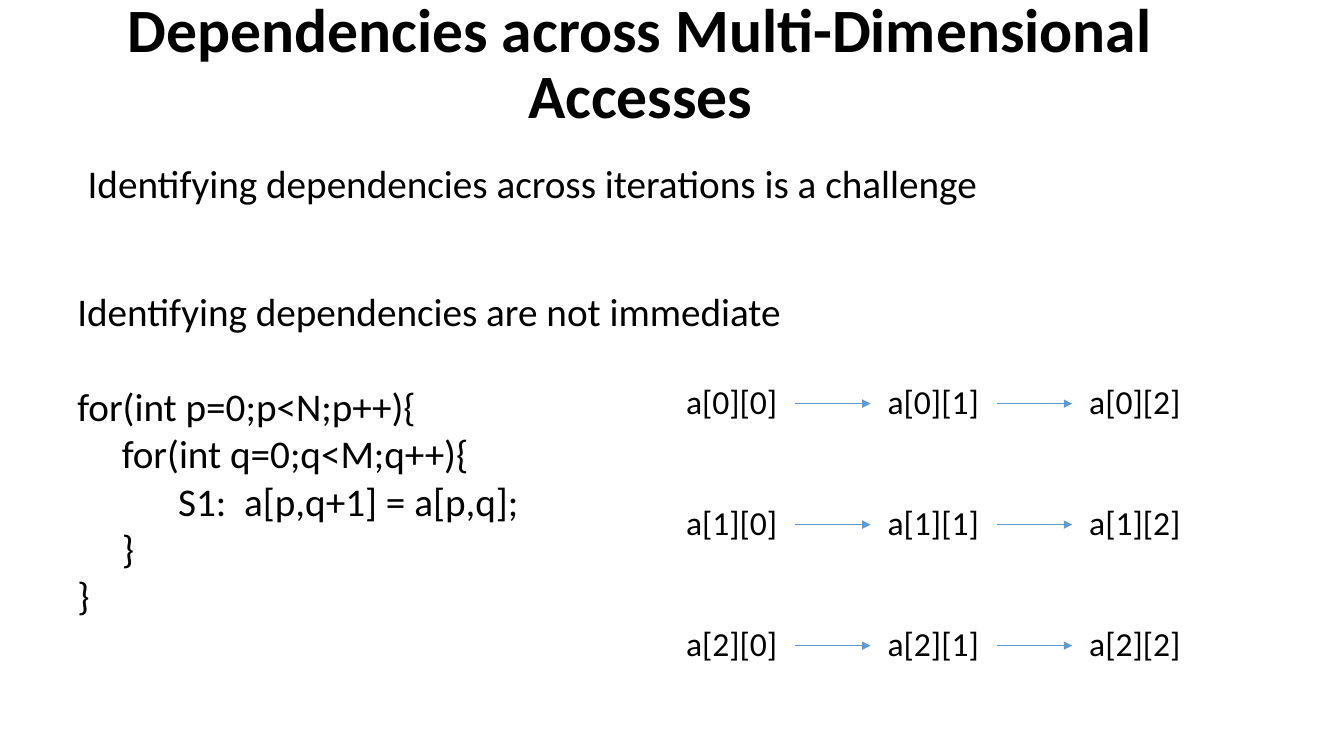
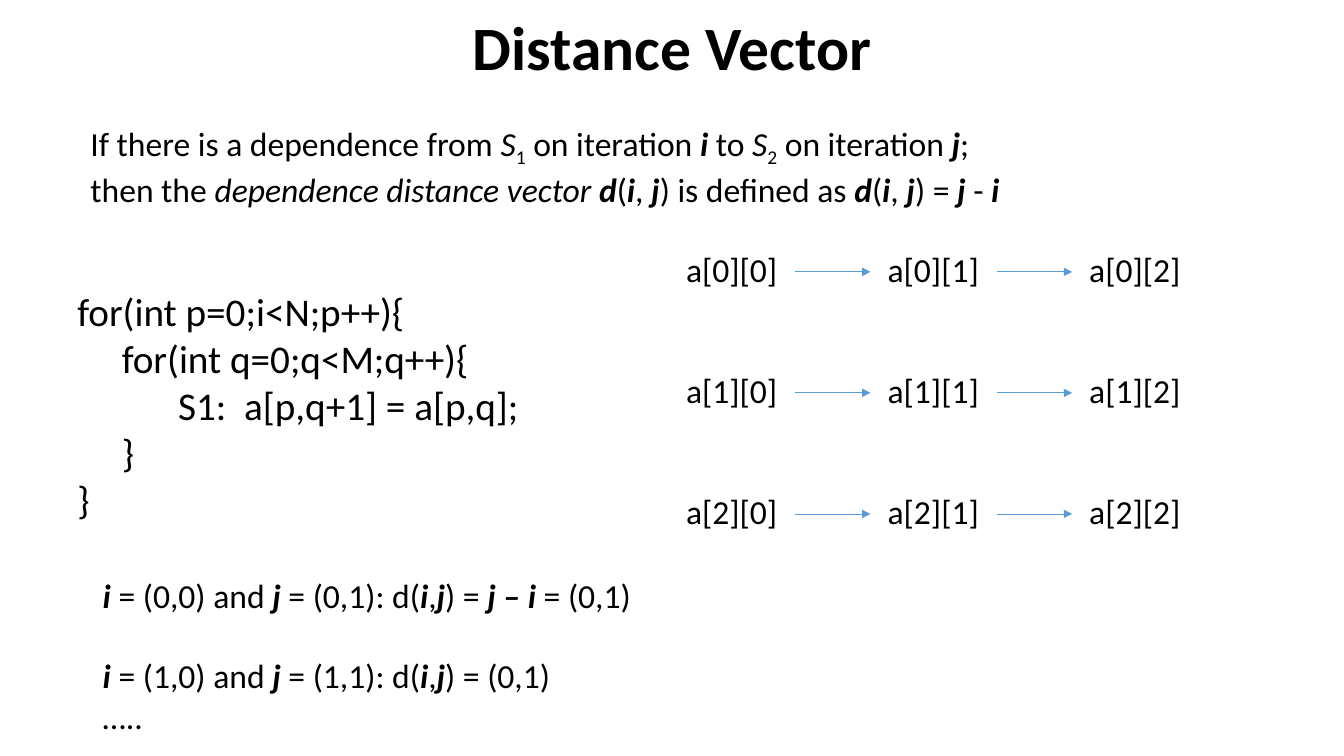
from dataclasses import dataclass

from pptx import Presentation
from pptx import util as u
from pptx.dml.color import RGBColor
from pptx.enum import shapes, text
from pptx.oxml import ns, xmlchemy


@dataclass(frozen=True)
class Theme:
    """Colours and type sizes shared by the slides."""
    font: str = "Calibri"
    ink: RGBColor = RGBColor(0, 0, 0)
    arrow: RGBColor = RGBColor(0x5B, 0x9B, 0xD5)
    title: int = 44
    large: int = 28
    normal: int = 24
    rule: float = 0.5


@dataclass(frozen=True)
class Span:
    """A stretch of text with its own character style."""
    words: str
    bold: bool = False
    italic: bool = False
    sub: bool = False


@dataclass(frozen=True)
class Line:
    """A paragraph of spans with indent in cm and space before in points."""
    spans: tuple
    indent: float = 0
    before: float = 0


THEME = Theme()
GRID_SIZE = 3
LABEL_W, LABEL_H = 2.9, 1.4
ARROW_START, ARROW_END = 0.1, 0.18
CODE_INDENTS = (0, 1.12, 2.54, 1.12, 0)


def vector(words):
    """Return a bold italic span."""
    return Span(words, bold=True, italic=True)


def term(words):
    """Return an italic span."""
    return Span(words, italic=True)


def sub(words):
    """Return a subscript span."""
    return Span(words, sub=True)


def format_run(r, size, bold=False, italic=False):
    """Apply the theme font to one run."""
    r.font.name, r.font.size = THEME.font, u.Pt(size)
    r.font.color.rgb = THEME.ink
    r.font.bold, r.font.italic = bold, italic


def add_title(s, box, words):
    """Move the title placeholder into the box and fill it."""
    sp = s.shapes.title
    sp.left, sp.top, sp.width, sp.height = map(u.Cm, box)
    tf = sp.text_frame
    tf.text = words
    tf.word_wrap, tf.auto_size = True, text.MSO_AUTO_SIZE.NONE
    tf.vertical_anchor = text.MSO_ANCHOR.MIDDLE
    p = tf.paragraphs[0]
    p.alignment, p.line_spacing = text.PP_ALIGN.CENTER, 0.9
    format_run(p.runs[0], THEME.title, bold=True)


def add_text(s, box, lines, size):
    """Place a text box holding plain strings or styled lines."""
    tf = s.shapes.add_textbox(*map(u.Cm, box)).text_frame
    tf.word_wrap = True
    for i, line in enumerate(lines):
        line = Line((line,)) if isinstance(line, str) else line
        p = tf.paragraphs[0] if i == 0 else tf.add_paragraph()
        p.space_before = u.Pt(line.before)
        if line.indent:
            p._p.get_or_add_pPr().set("marL", str(u.Cm(line.indent)))
        for span in line.spans:
            span = Span(span) if isinstance(span, str) else span
            r = p.add_run()
            r.text = span.words
            format_run(r, size, span.bold, span.italic)
            if span.sub:
                r._r.get_or_add_rPr().set("baseline", "-25000")


def add_code(s, box, condition):
    """Place the nested loop with the given outer condition."""
    code = (f"for(int p=0;{condition};p++){{", "for(int q=0;q<M;q++){",
            "S1:  a[p,q+1] = a[p,q];", "}", "}")
    lines = [Line((words,), indent) for words, indent in zip(code, CODE_INDENTS)]
    add_text(s, box, lines, THEME.large)


def add_arrow(s, x1, x2, y):
    """Draw a thin horizontal arrow."""
    sp = s.shapes.add_connector(shapes.MSO_CONNECTOR.STRAIGHT,
                                *map(u.Cm, (x1, y, x2, y)))
    sp.line.color.rgb, sp.line.width = THEME.arrow, u.Pt(THEME.rule)
    tail = xmlchemy.OxmlElement("a:tailEnd")
    tail.set("type", "triangle")
    props = sp._element.spPr
    props.find(ns.qn("a:ln")).append(tail)
    props.append(xmlchemy.OxmlElement("a:effectLst"))


def add_access_grid(s, box):
    """Spread the array accesses over the box, joined along each row."""
    left, top, width, height = box
    dx = (width - LABEL_W) / (GRID_SIZE - 1)
    dy = (height - LABEL_H) / (GRID_SIZE - 1)
    for row in range(GRID_SIZE):
        y = top + row * dy
        for col in range(GRID_SIZE):
            x = left + col * dx
            add_text(s, (x, y, LABEL_W, LABEL_H), [f"a[{row}][{col}]"], THEME.normal)
            if col < GRID_SIZE - 1:
                add_arrow(s, x + LABEL_W + ARROW_START, x + dx - ARROW_END,
                          y + LABEL_H / 2)


def new_slide(prs, title_box, title):
    """Add a title-only slide."""
    s = prs.slides.add_slide(prs.slide_layouts[5])
    add_title(s, title_box, title)
    return s


def dependencies_slide(prs):
    """Build the slide on multi-dimensional accesses."""
    s = new_slide(prs, (0.74, 0.43, 30.81, 2.44),
                  "Dependencies across Multi-Dimensional Accesses")
    add_text(s, (1.96, 3.89, 29.29, 1.45),
             ["Identifying dependencies across iterations is a challenge"], THEME.large)
    add_text(s, (1.7, 7.11, 18.9, 1.45),
             ["Identifying dependencies are not immediate"], THEME.large)
    add_code(s, (1.7, 9.52, 12.57, 6.25), "p<N")
    add_access_grid(s, (17.04, 9.47, 13.06, 7.5))


def distance_slide(prs):
    """Build the slide defining the distance vector."""
    s = new_slide(prs, (2.34, 0.18, 29.21, 2.21), "Distance Vector")
    i, j = vector("i"), vector("j")
    distance = (vector("d"), "(", i, ", ", j)
    definition = [
        Line(("If there is a dependence from ", term("S"), sub("1"), " on iteration ", i,
              " to ", term("S"), sub("2"), " on iteration ", j, ";")),
        Line(("then the ", term("dependence distance vector "), *distance,
              ") is defined as ", *distance, ") = ", vector("j "), "- ", i)),
    ]
    examples = [
        Line((i, " = (0,0) and ", j, " = (0,1): d(", i, ",", j, ") = ",
              vector("j – i"), " = (0,1)")),
        Line((i, " = (1,0) and ", j, " = (1,1): d(", i, ",", j, ") = (0,1)"), before=29),
        "…..",
    ]
    add_text(s, (2.03, 2.97, 30.68, 2.31), definition, THEME.normal)
    add_code(s, (1.7, 7.11, 12.57, 6.25), "i<N")
    add_access_grid(s, (17.04, 6.15, 13.06, 7.5))
    add_text(s, (2.34, 14.35, 15.34, 4.37), examples, THEME.normal)


def main():
    """Build and save the presentation."""
    prs = Presentation()
    prs.slide_width, prs.slide_height = u.Cm(33.87), u.Cm(19.05)
    dependencies_slide(prs)
    distance_slide(prs)
    prs.save("out.pptx")


if __name__ == "__main__":
    main()
